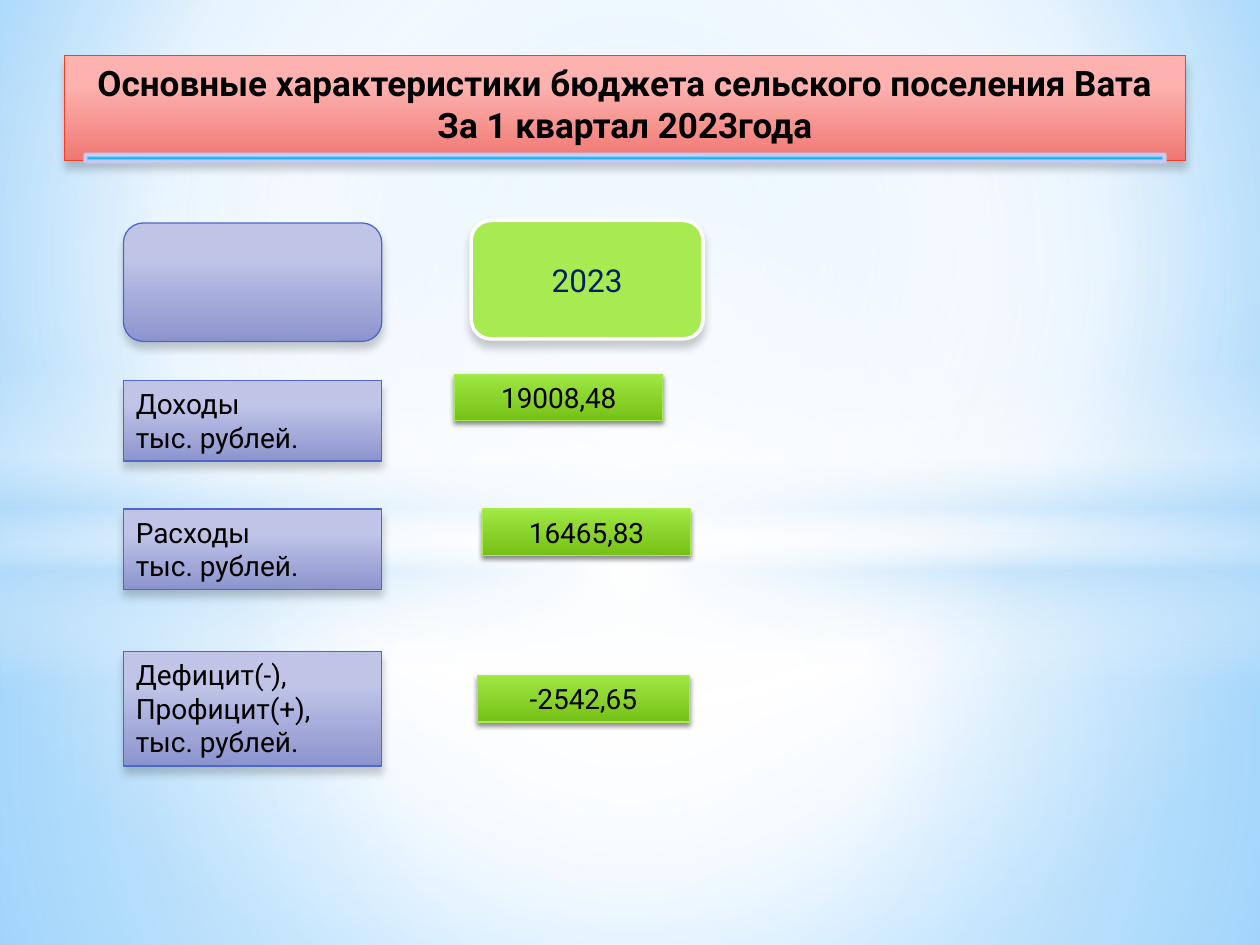
from lxml.etree import SubElement
from pptx import Presentation
from pptx.dml.color import RGBColor
from pptx.enum.shapes import MSO_SHAPE as Shape
from pptx.enum.text import MSO_ANCHOR as Anchor, MSO_AUTO_SIZE as AutoSize, PP_ALIGN as Align
from pptx.oxml.ns import qn
from pptx.util import Inches, Pt

COLORS = {
    "white": "FFFFFF", "black": "000000", "navy": "002060", "sky": "9ED5FF",
    "blue": "5BB9FF", "pale": "B4DCFA", "pink": "FDB2AF", "coral": "F07873",
    "red": "F14124", "lilac": "C0C5E8", "violet": "8C94CE", "indigo": "4E67C8",
    "lime": "A7EA52", "leaf": "A0E844", "green": "75C016", "cyan": "12B2EB",
    "mist": "C1C7F2", "haze": "E1E3F8",
}
CENTER = (50, 50, 50, 50)
SOFT = (20, 5, 4)
TIGHT = (45, 3.1, 1.8)
LILAC = [(28, "lilac"), (100, "violet")]
GREEN = [(0, "leaf"), (100, "green")]


def rgb(name):
    return RGBColor.from_string(COLORS[name])


def add_color(parent, name, alpha=100):
    clr = SubElement(parent, qn("a:srgbClr"), val=COLORS[name])
    if alpha < 100:
        SubElement(clr, qn("a:alpha"), val=str(alpha * 1000))


def set_gradient(fill, parent, stops, path=None, to=CENTER):
    fill.solid()
    solid = parent.find(qn("a:solidFill"))
    grad = parent.makeelement(qn("a:gradFill"), {"rotWithShape": "1"})
    gs_lst = SubElement(grad, qn("a:gsLst"))
    for pos, *color in stops:
        add_color(SubElement(gs_lst, qn("a:gs"), pos=str(pos * 1000)), *color)
    if path:
        shade = SubElement(grad, qn("a:path"), path=path)
        sides = {side: str(v * 1000) for side, v in zip("ltrb", to)}
        SubElement(shade, qn("a:fillToRect"), sides)
    else:
        SubElement(grad, qn("a:lin"), ang="5400000", scaled="0")
    parent.replace(solid, grad)


class BudgetSlide:
    font = "Roboto"

    def __init__(self, prs):
        self.s = prs.slides.add_slide(prs.slide_layouts[5])

    def background(self, stops, to):
        fill = self.s.background.fill
        fill.solid()
        set_gradient(fill, self.s.element.find(".//" + qn("p:bgPr")), stops, "circle", to)

    def style(self, sp, fill, line=None, width=0.75, shadow=None, path=None):
        if isinstance(fill, str):
            sp.fill.solid()
            sp.fill.fore_color.rgb = rgb(fill)
        else:
            set_gradient(sp.fill, sp.element.spPr, fill, path)
        if line:
            sp.line.color.rgb = rgb(line)
            sp.line.width = Pt(width)
        else:
            sp.line.fill.background()
        sp.shadow.inherit = False
        if shadow:
            alpha, blur, dist = shadow
            effects = sp.element.spPr.find(qn("a:effectLst"))
            outer = SubElement(effects, qn("a:outerShdw"), blurRad=str(Pt(blur)),
                               dist=str(Pt(dist)), dir="5400000", rotWithShape="0")
            add_color(outer, "black", alpha)

    def shape(self, kind, box, fill, **style):
        sp = self.s.shapes.add_shape(kind, *map(Inches, box))
        self.style(sp, fill, **style)
        return sp

    def text(self, sp, text, size=16, color="black", bold=False,
             align=Align.CENTER, anchor=Anchor.TOP, wrap=True):
        tf = sp.text_frame
        tf.text = text
        tf.word_wrap = wrap
        tf.vertical_anchor = anchor
        tf.auto_size = AutoSize.SHAPE_TO_FIT_TEXT if anchor == Anchor.TOP else AutoSize.NONE
        for p in tf.paragraphs:
            p.alignment = align
            for r in p.runs:
                r.font.name = self.font
                r.font.size = Pt(size)
                r.font.bold = bold
                r.font.color.rgb = rgb(color)

    def title(self, box, text):
        sp = self.s.shapes.title
        sp.left, sp.top, sp.width, sp.height = map(Inches, box)
        self.style(sp, [(28, "pink"), (100, "coral")], line="red", shadow=SOFT)
        self.text(sp, text, size=20, bold=True, wrap=False)
        self.s.shapes.element.append(sp.element)

    def label(self, top, height, text):
        sp = self.shape(Shape.RECTANGLE, (0.98, top, 2.05, height), LILAC,
                        line="indigo", shadow=SOFT)
        self.text(sp, text, align=Align.LEFT)

    def value(self, left, top, width, text):
        sp = self.shape(Shape.RECTANGLE, (left, top, width, 0.37), GREEN,
                        line="lime", shadow=TIGHT)
        self.text(sp, text)


def main():
    prs = Presentation()
    prs.slide_width, prs.slide_height = Inches(10), Inches(7.5)
    b = BudgetSlide(prs)

    b.background([(0, "sky"), (60, "white"), (100, "blue")], (20, 10, 20, 60))
    b.shape(Shape.RECTANGLE, (0, 4.23, 10, 3.27),
            [(0, "white", 91), (37, "white", 76), (100, "pale", 79)], path="circle")
    b.shape(Shape.RECTANGLE, (0, 0, 10, 4.23),
            [(0, "white", 89), (48, "white", 62), (100, "pale", 79)], path="circle")
    b.shape(Shape.RECTANGLE, (0, 2.9, 10, 2.5),
            [(0, "white", 0), (29, "white", 30), (45, "pale", 40),
             (55, "white", 26), (65, "pale", 60), (100, "white", 0)])
    b.shape(Shape.OVAL, (0, 1.75, 10, 5.58),
            [(0, "white"), (54, "white", 0)], path="circle")

    b.title((0.51, 0.44, 8.9, 0.77),
            "Основные характеристики бюджета сельского поселения Вата\nЗа 1 квартал 2023года")

    b.shape(Shape.ROUNDED_RECTANGLE, (0.98, 1.77, 2.05, 0.94), LILAC,
            line="indigo", shadow=SOFT)
    year = b.shape(Shape.ROUNDED_RECTANGLE, (3.74, 1.75, 1.84, 0.94), "lime",
                   line="white", width=2, shadow=SOFT)
    b.text(year, "2023", size=18, color="navy", anchor=Anchor.MIDDLE)

    for top, height, text in [
        (3.02, 0.64, "Доходы\nтыс. рублей."),
        (4.04, 0.64, "Расходы\nтыс. рублей."),
        (5.17, 0.91, "Дефицит(-),\nПрофицит(+),\nтыс. рублей."),
    ]:
        b.label(top, height, text)

    b.shape(Shape.ROUNDED_RECTANGLE, (0.67, 1.22, 8.58, 0.07),
            [(0, "cyan"), (50, "mist"), (100, "haze")],
            line="mist", width=1.25, path="rect")

    for left, top, width, text in [
        (3.61, 2.97, 1.65, "19008,48"),
        (3.83, 4.04, 1.65, "16465,83"),
        (3.79, 5.36, 1.68, "-2542,65"),
    ]:
        b.value(left, top, width, text)

    prs.save("out.pptx")


if __name__ == "__main__":
    main()
